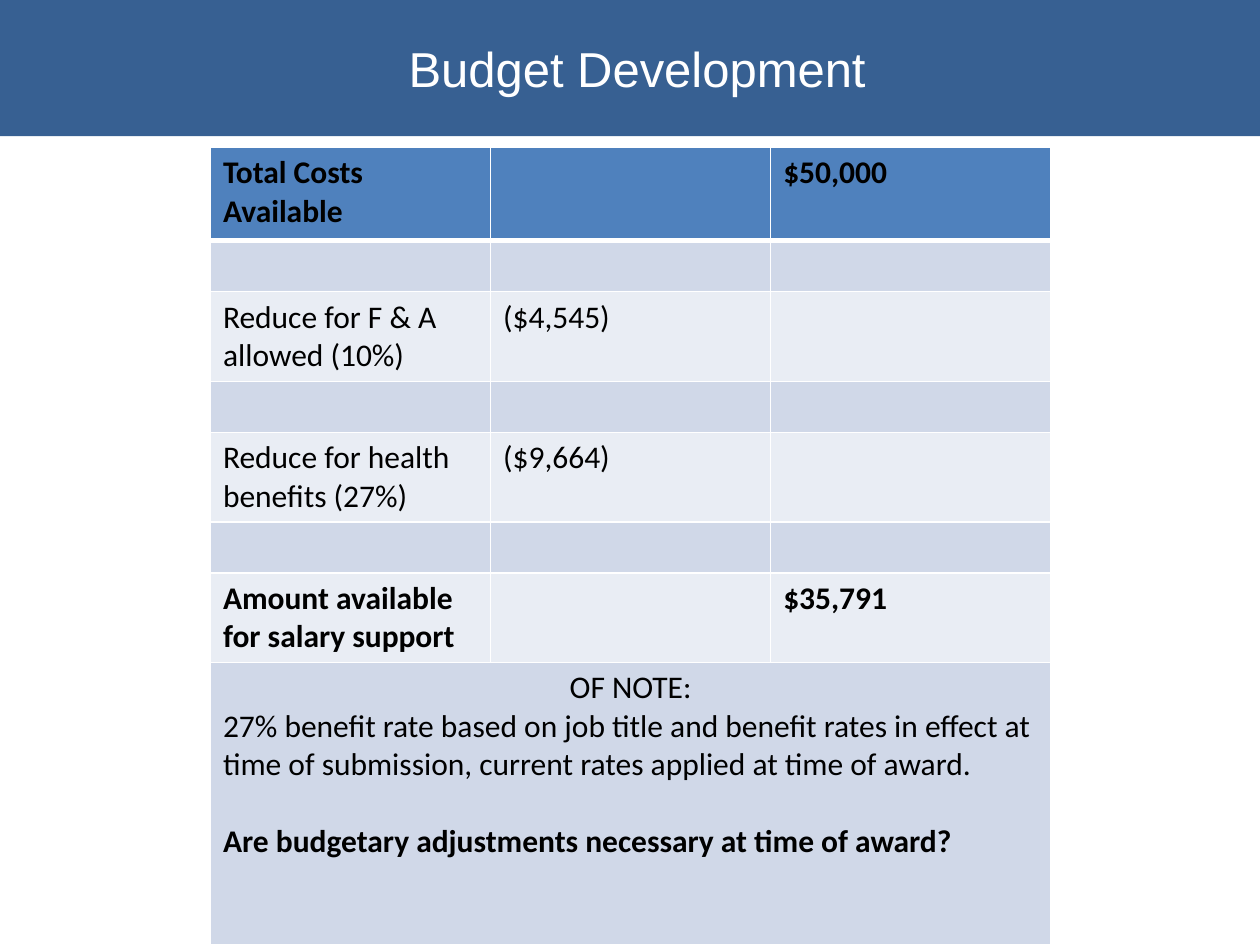
from lxml.etree import SubElement
from pptx import Presentation
from pptx.dml.color import RGBColor
from pptx.enum.shapes import MSO_SHAPE
from pptx.enum.text import MSO_ANCHOR, PP_ALIGN
from pptx.oxml.ns import qn
from pptx.util import Inches, Pt

HEADER, BAND, LIGHT = "4F81BD", "D0D8E8", "E9EDF4"
ROWS = [
    (0.74, ["Total Costs Available", "", "$50,000"], True),
    (0.37, ["", "", ""], False),
    (0.65, ["Reduce for F & A allowed (10%)", "($4,545)", ""], False),
    (0.37, ["", "", ""], False),
    (0.65, ["Reduce for health benefits (27%)", "($9,664)", ""], False),
    (0.37, ["", "", ""], False),
    (0.65, ["Amount available for salary support", "", "$35,791"], True),
    (2.24, ["", "", ""], False),
]
NOTES = [
    ("OF NOTE:", PP_ALIGN.CENTER, False, 0),
    ("27% benefit rate based on job title and benefit rates in effect at time of "
     "submission, current rates applied at time of award.", PP_ALIGN.LEFT, False, 0),
    ("Are budgetary adjustments necessary at time of award?", PP_ALIGN.LEFT, True, 22),
]


def rgb(value):
    """Return the colour of a hex string."""
    return RGBColor.from_string(value)


def add_run(p, text, size, font, color, bold=False):
    """Add one formatted run to a paragraph."""
    r = p.add_run()
    r.text = text
    r.font.size, r.font.name, r.font.bold = Pt(size), font, bold
    r.font.color.rgb = rgb(color)


def add_title(s, x, y, w, h):
    """Draw the title band across the given box."""
    sp = s.shapes.add_shape(MSO_SHAPE.RECTANGLE, Inches(x), Inches(y), Inches(w), Inches(h))
    sp.shadow.inherit = False
    sp.fill.solid()
    sp.fill.fore_color.rgb = rgb("376092")
    sp.line.fill.background()
    tf = sp.text_frame
    tf.word_wrap = True
    tf.vertical_anchor = MSO_ANCHOR.MIDDLE
    tf.margin_left = Inches(0.21)
    p = tf.paragraphs[0]
    p.alignment = PP_ALIGN.CENTER
    add_run(p, "Budget Development", 28, "Arial", "FFFFFF")


def style_cell(cell, fill, thick_side=""):
    """Give a cell its fill and white borders, one of them thick."""
    tcPr = cell._tc.get_or_add_tcPr()
    for side in "LRTB":
        width = Pt(3 if side == thick_side else 1)
        ln = SubElement(tcPr, qn(f"a:ln{side}"), w=str(width))
        SubElement(SubElement(ln, qn("a:solidFill")), qn("a:srgbClr"), val="FFFFFF")
    cell.fill.solid()
    cell.fill.fore_color.rgb = rgb(fill)


def add_notes(cell):
    """Write the notes into the merged bottom cell."""
    tf = cell.text_frame
    for i, (text, align, bold, before) in enumerate(NOTES):
        p = tf.add_paragraph() if i else tf.paragraphs[0]
        p.alignment = align
        p.space_before = Pt(before)
        add_run(p, text, 18, "Calibri", "000000", bold)


def add_budget(s, x, y, w):
    """Draw the budget table from the given corner and width."""
    height = sum(row[0] for row in ROWS)
    tbl = s.shapes.add_table(len(ROWS), 3, Inches(x), Inches(y), Inches(w), Inches(height)).table
    for col in tbl.columns:
        col.width = Inches(w / 3)
    for i, (h, texts, bold) in enumerate(ROWS):
        tbl.rows[i].height = Inches(h)
        fill = HEADER if i == 0 else BAND if i % 2 else LIGHT
        thick_side = {0: "B", 1: "T"}.get(i, "")
        for j, text in enumerate(texts):
            cell = tbl.cell(i, j)
            style_cell(cell, fill, thick_side)
            if text:
                add_run(cell.text_frame.paragraphs[0], text, 18, "Calibri", "000000", bold)
    last = len(ROWS) - 1
    tbl.cell(last, 0).merge(tbl.cell(last, 2))
    add_notes(tbl.cell(last, 0))


def main():
    """Build and save the slide."""
    prs = Presentation()
    prs.slide_width, prs.slide_height = Inches(10), Inches(7.5)
    s = prs.slides.add_slide(prs.slide_layouts[6])
    add_title(s, 0, 0, 10, 1.08)
    add_budget(s, 1.67, 1.17, 6.67)
    prs.save("out.pptx")


if __name__ == "__main__":
    main()
